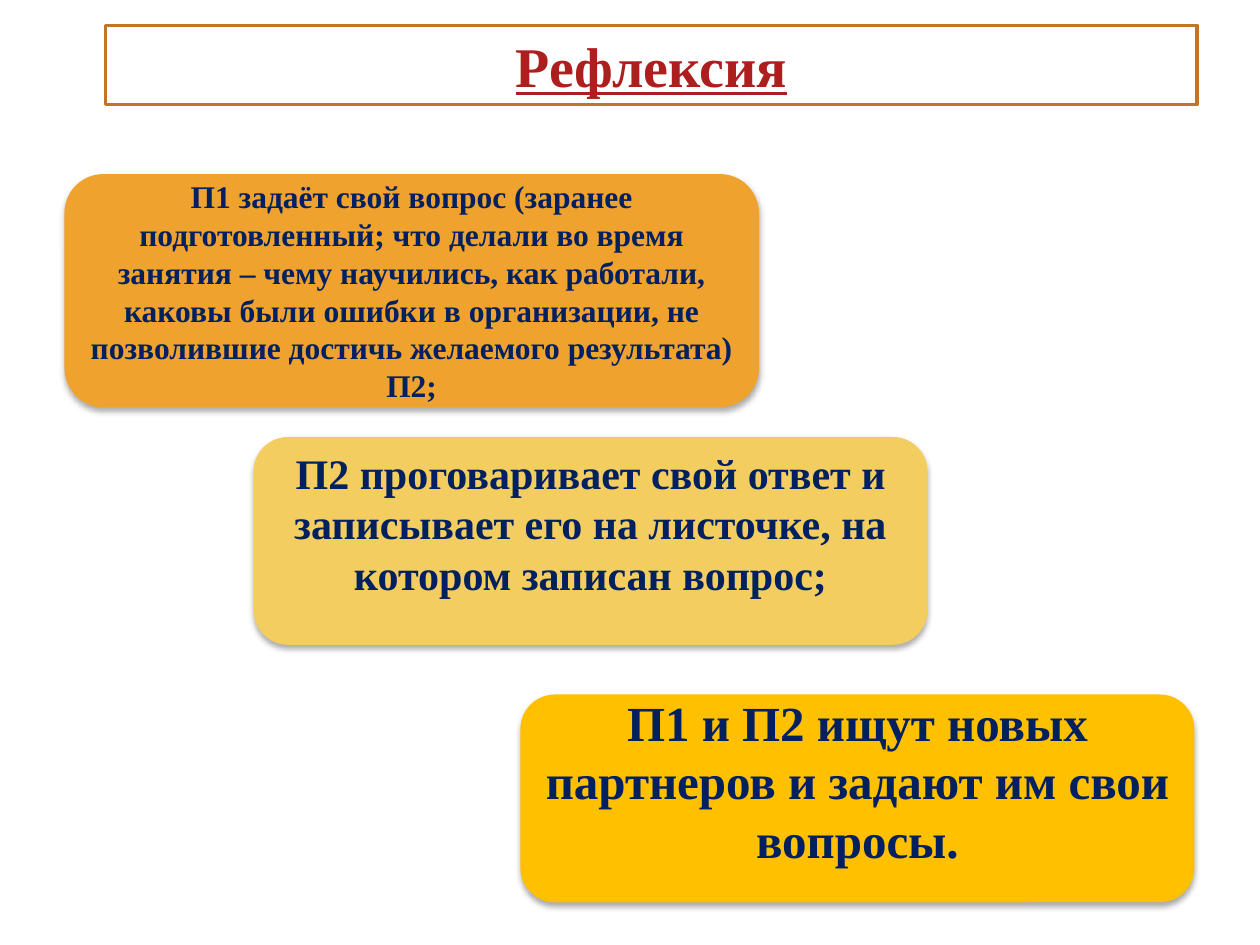
import pptx
import pptx.dml.color
import pptx.enum.shapes
import pptx.enum.text
import pptx.oxml
import pptx.oxml.ns
import pptx.util

Cm = pptx.util.Cm
RGBColor = pptx.dml.color.RGBColor

WHITE = RGBColor(0xFF, 0xFF, 0xFF)
BROWN = RGBColor(0xC1, 0x75, 0x29)
RED = RGBColor(0xAD, 0x1F, 0x1F)
NAVY = RGBColor(0x00, 0x20, 0x60)
ORANGE = RGBColor(0xF0, 0xA2, 0x2E)
SAND = RGBColor(0xF3, 0xCD, 0x60)
AMBER = RGBColor(0xFF, 0xC0, 0x00)

FONT = "Times New Roman"
NAMESPACE = pptx.oxml.ns.nsdecls("a")
ROUNDED = f'<a:prstGeom {NAMESPACE} prst="roundRect"><a:avLst/></a:prstGeom>'
SHADOW = (
    f'<a:outerShdw {NAMESPACE} blurRad="44450" dist="27940" dir="5400000" '
    'algn="ctr" rotWithShape="0"><a:srgbClr val="000000">'
    '<a:alpha val="32000"/></a:srgbClr></a:outerShdw>'
)

STEPS = [
    (1.3, 3.51, 14, 4.7, ORANGE, 18, 0.13, 0.13,
     "П1 задаёт свой вопрос (заранее подготовленный; что делали во время "
     "занятия – чему научились, как работали, каковы были ошибки в организации, "
     "не позволившие достичь желаемого результата) П2;"),
    (5.11, 8.81, 13.59, 4.19, SAND, 24, 0, 0.73,
     "П2 проговаривает свой ответ и записывает его на листочке, "
     "на котором записан вопрос;"),
    (10.49, 14, 13.59, 4.19, AMBER, 28, 0, 0.73,
     "П1 и П2 ищут новых партнеров и задают им свои вопросы."),
]


def write_text(shape, text, *, size, color, underline=False, top=0.13, bottom=0.13):
    frame = shape.text_frame
    frame.word_wrap = True
    frame.auto_size = pptx.enum.text.MSO_AUTO_SIZE.NONE
    frame.vertical_anchor = pptx.enum.text.MSO_ANCHOR.MIDDLE
    frame.margin_left = frame.margin_right = Cm(0.25)
    frame.margin_top = Cm(top)
    frame.margin_bottom = Cm(bottom)
    paragraph = frame.paragraphs[0]
    paragraph.alignment = pptx.enum.text.PP_ALIGN.CENTER
    run = paragraph.add_run()
    run.text = text
    run.font.name = FONT
    run.font.size = pptx.util.Pt(size)
    run.font.bold = True
    run.font.underline = underline
    run.font.color.rgb = color


def paint(shape, color):
    shape.fill.solid()
    shape.fill.fore_color.rgb = color


def add_title(slide, text):
    title = slide.shapes.title
    title.left, title.top = Cm(2.13), Cm(0.51)
    title.width, title.height = Cm(22), Cm(1.6)
    title.element.spPr.append(pptx.oxml.parse_xml(ROUNDED))
    paint(title, WHITE)
    title.line.color.rgb = BROWN
    title.line.width = pptx.util.Pt(2)
    write_text(title, text, size=32, color=RED, underline=True)


def add_step(slide, left, top, width, height, color, size, inset_top, inset_bottom, text):
    step = slide.shapes.add_shape(
        pptx.enum.shapes.MSO_SHAPE.ROUNDED_RECTANGLE,
        Cm(left), Cm(top), Cm(width), Cm(height),
    )
    paint(step, color)
    step.line.fill.background()
    step.shadow.inherit = False
    effects = step.element.spPr.find(pptx.oxml.ns.qn("a:effectLst"))
    effects.append(pptx.oxml.parse_xml(SHADOW))
    write_text(step, text, size=size, color=NAVY, top=inset_top, bottom=inset_bottom)


def main():
    presentation = pptx.Presentation()
    presentation.slide_width = Cm(25.4)
    presentation.slide_height = Cm(19.05)
    slide = presentation.slides.add_slide(presentation.slide_layouts[5])
    add_title(slide, "Рефлексия")
    for step in STEPS:
        add_step(slide, *step)
    presentation.save("out.pptx")


if __name__ == "__main__":
    main()
